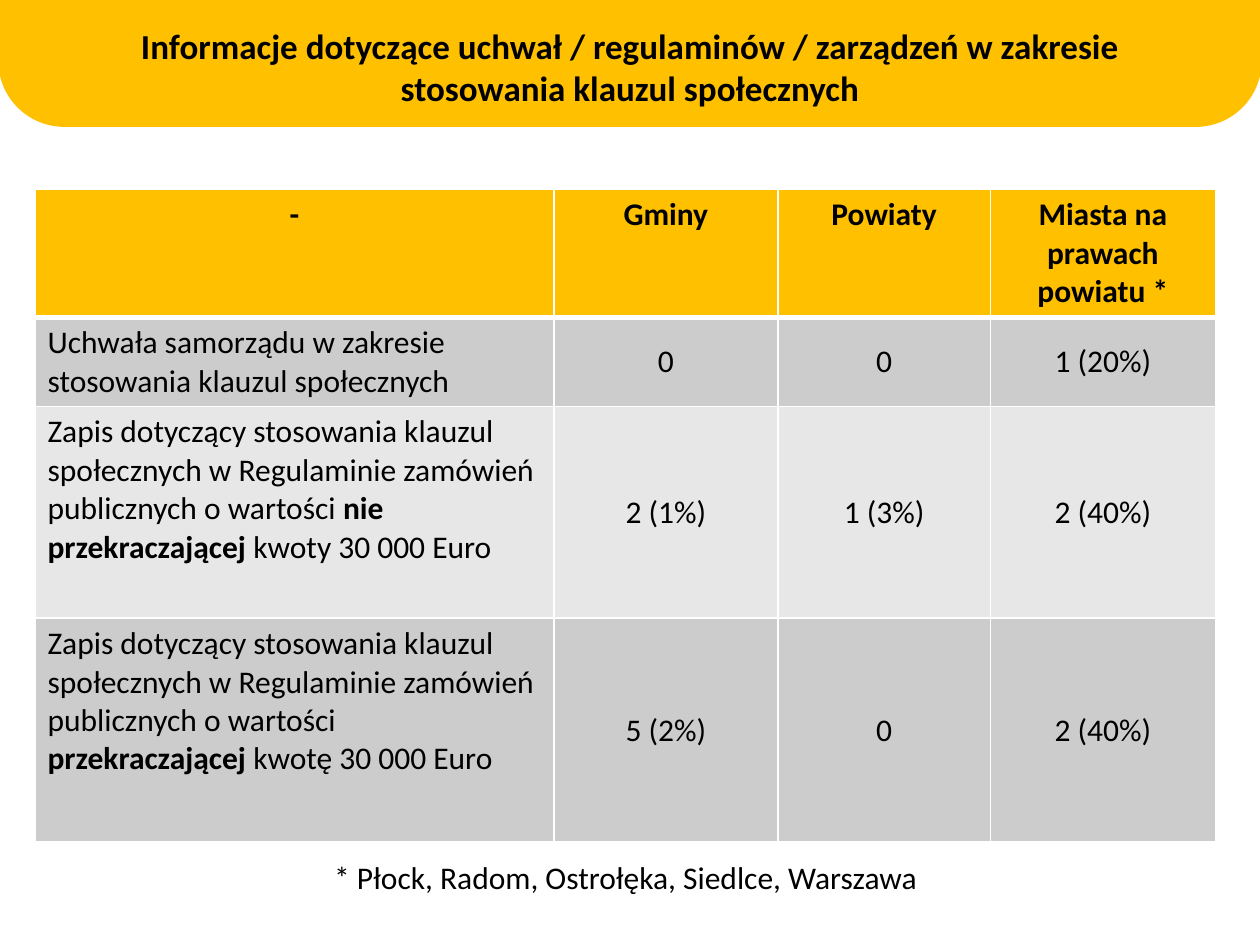
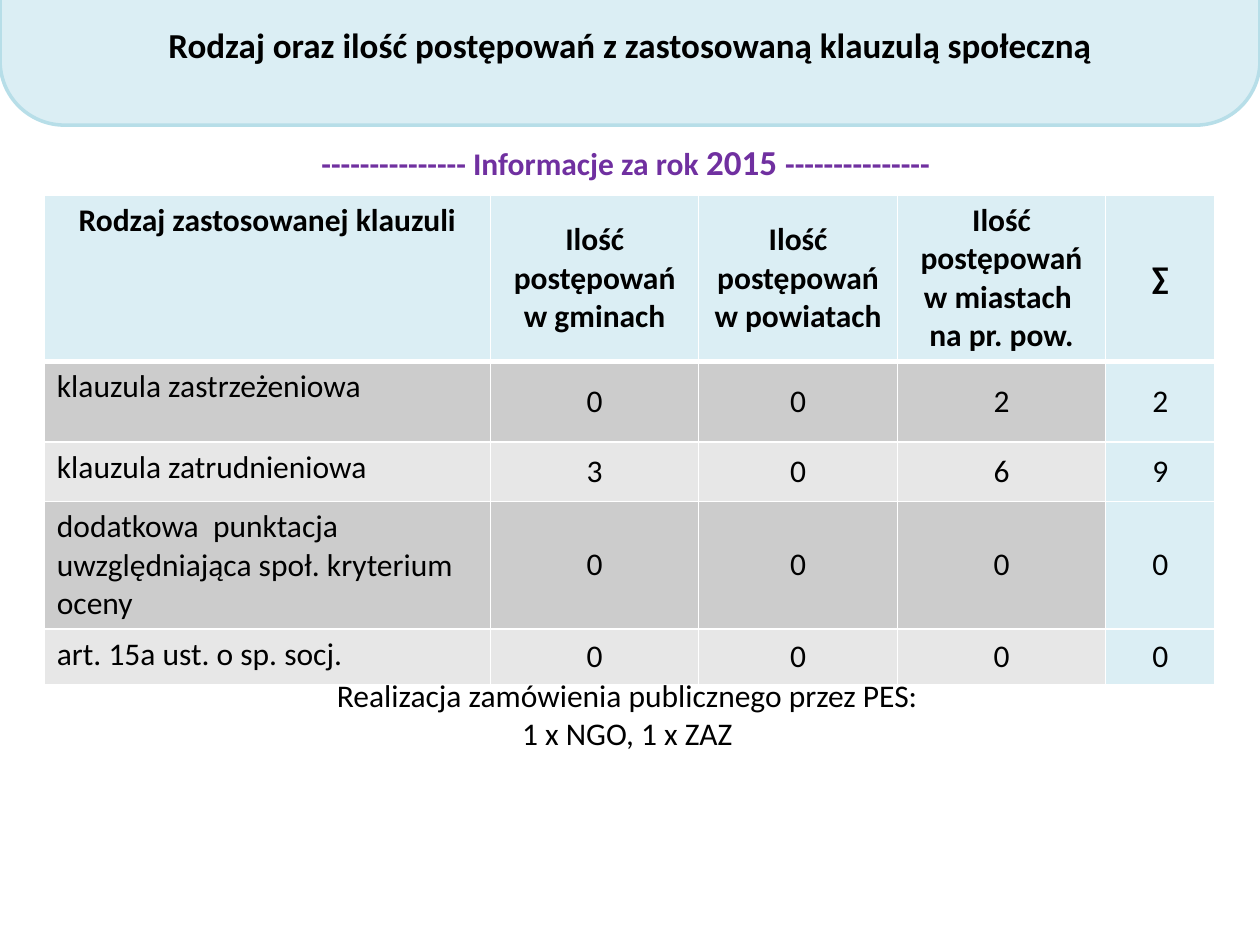
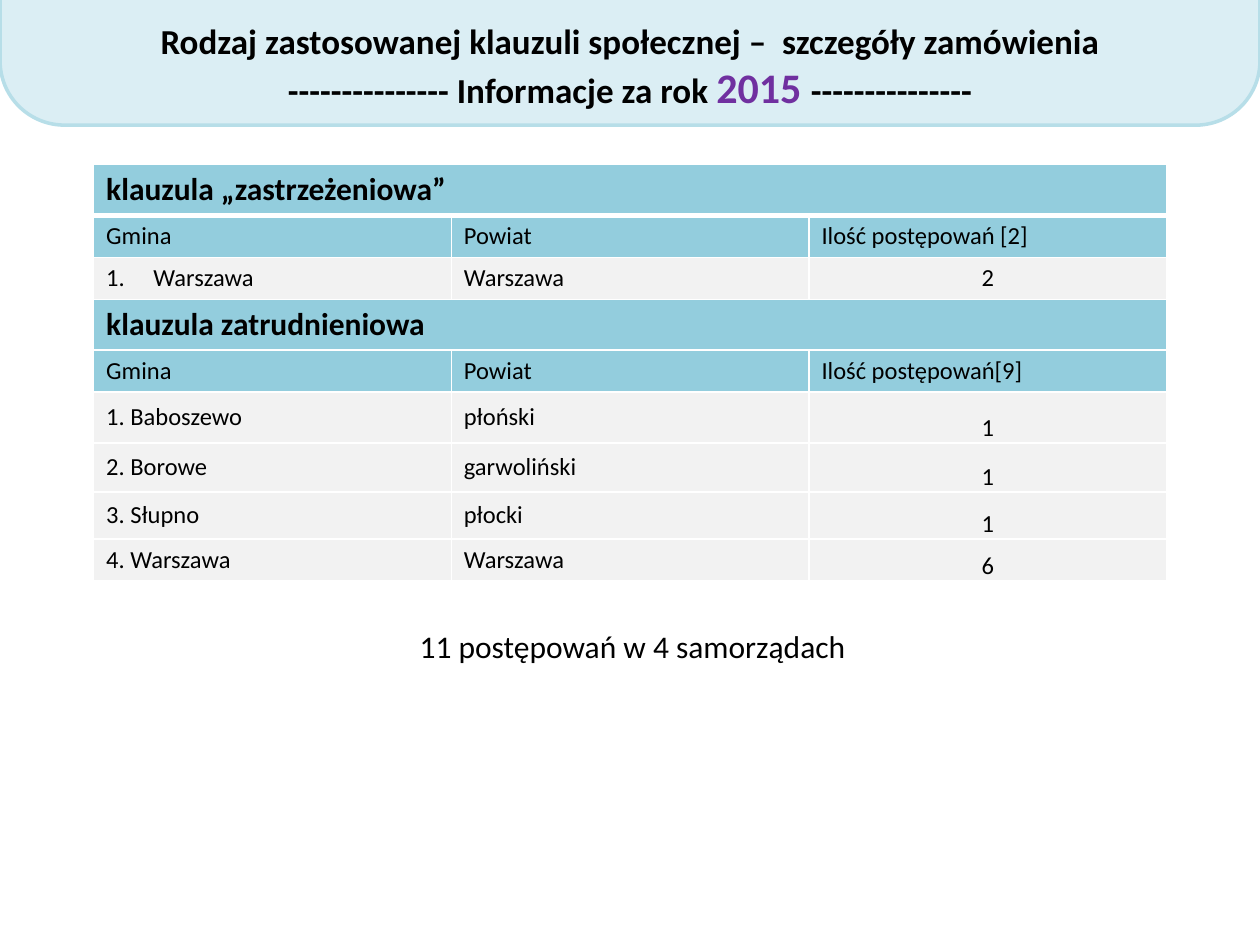
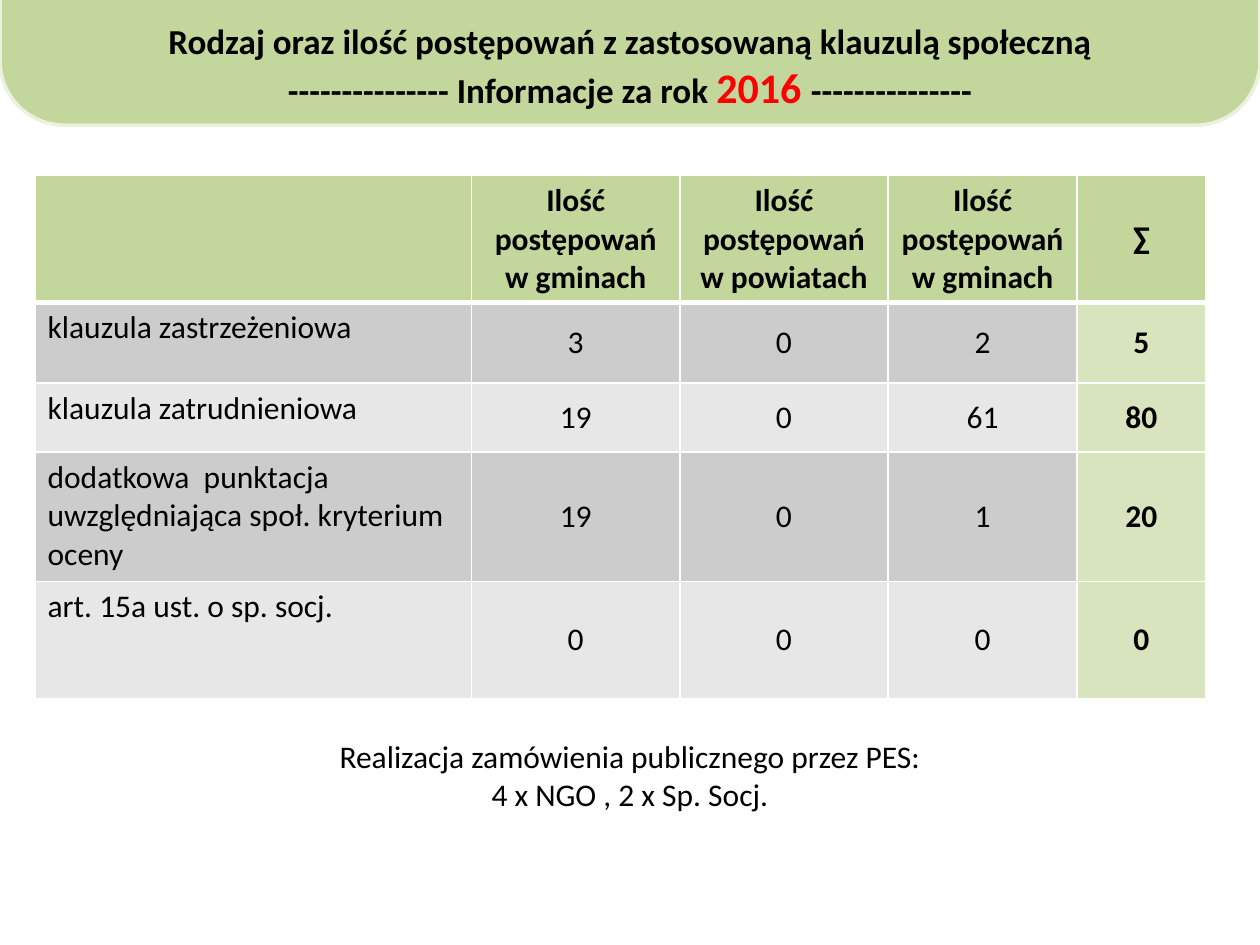
from lxml import etree
from pptx import Presentation
from pptx import util as u
from pptx.dml import color
from pptx.enum import shapes, text
from pptx.oxml import ns

FONT = "Calibri"
BLACK, WHITE = "000000", "FFFFFF"
PURPLE, RED = "7030A0", "FF0000"
AMBER = "FFC000"
ICE, ICE_EDGE, SKY = "DBEEF4", "B7DEE8", "93CDDD"
GREEN, GREEN_EDGE, GREEN_PALE = "C3D69B", "EBF1DE", "D7E4BD"
STRIPES = ("CCCCCC", "E7E7E7")
PALE_GREY = "F2F2F2"
DASHES = "---------------"
TITLE_BOX = (36, -2, 648, 79)

LEFT, CENTER = text.PP_ALIGN.LEFT, text.PP_ALIGN.CENTER
TOP, MIDDLE, BOTTOM = (text.MSO_ANCHOR.TOP, text.MSO_ANCHOR.MIDDLE,
                       text.MSO_ANCHOR.BOTTOM)


def rgb(value):
    return color.RGBColor.from_string(value)


# ---- Text ----
def write(frame, content, size=18, bold=False, ink=BLACK, align=LEFT):
    """Content is a string or a list of (text, overrides) runs."""
    paragraph = frame.paragraphs[0]
    paragraph.alignment = align
    runs = [(content, {})] if isinstance(content, str) else content
    for words, overrides in runs:
        style = {"size": size, "bold": bold, "ink": ink, **overrides}
        for number, line in enumerate(words.split("\n")):
            if number:
                paragraph.add_line_break()
            if not line:
                continue
            run = paragraph.add_run()
            run.text = line
            run.font.name = FONT
            run.font.size = u.Pt(style["size"])
            run.font.bold = style["bold"]
            run.font.color.rgb = rgb(style["ink"])


def add_text(slide, box, content, anchor=TOP, bottom_inset=3.6, **style):
    frame = slide.shapes.add_textbox(*map(u.Pt, box)).text_frame
    frame.word_wrap = True
    frame.vertical_anchor = anchor
    frame.margin_bottom = u.Pt(bottom_inset)
    write(frame, content, align=CENTER, **style)


def number_paragraph(paragraph, indent):
    properties = paragraph._p.get_or_add_pPr()
    properties.set("marL", str(u.Pt(indent)))
    properties.set("indent", str(-u.Pt(indent)))
    etree.SubElement(properties, ns.qn("a:buAutoNum"), type="arabicPeriod")


# ---- Title band ----
def add_title(slide, content, fill, edge, box=TITLE_BOX, bottom_inset=3.6):
    band = slide.shapes.add_shape(shapes.MSO_SHAPE.ROUND_2_SAME_RECTANGLE,
                                  *map(u.Pt, (0, -2, 720, 73.5)))
    band.rotation = 180
    band.adjustments[0] = 0.5
    band.adjustments[1] = 0
    band.shadow.inherit = False
    band.fill.solid()
    band.fill.fore_color.rgb = rgb(fill)
    band.line.color.rgb = rgb(edge)
    band.line.width = u.Pt(2)
    add_text(slide, box, content, MIDDLE, bottom_inset, size=20, bold=True)


def year_title(first_line, year, ink):
    return [(f"{first_line}\n{DASHES} Informacje za rok ", {}),
            (f"{year} ", {"size": 24, "ink": ink}), (DASHES, {})]


# ---- Tables ----
def set_borders(cell, top, bottom):
    properties = cell._tc.get_or_add_tcPr()
    widths = {"lnL": 1, "lnR": 1, "lnT": top, "lnB": bottom}
    for position, (side, width) in enumerate(widths.items()):
        line = etree.Element(ns.qn(f"a:{side}"), w=str(u.Pt(width)))
        fill = etree.SubElement(line, ns.qn("a:solidFill"))
        etree.SubElement(fill, ns.qn("a:srgbClr"), val=WHITE)
        properties.insert(position, line)


def add_grid(slide, left, top, widths, heights):
    """Empty table with white rules, the first one thicker below."""
    frame = slide.shapes.add_table(len(heights), len(widths), u.Pt(left), u.Pt(top),
                                   u.Pt(sum(widths)), u.Pt(sum(heights)))
    table = frame.table
    table.horz_banding = False
    for column, width in zip(table.columns, widths):
        column.width = u.Pt(width)
    for index, (row, height) in enumerate(zip(table.rows, heights)):
        row.height = u.Pt(height)
        for cell in row.cells:
            set_borders(cell, 3 if index == 1 else 1, 3 if index == 0 else 1)
    return table


def fill_cell(cell, content, fill, anchor=TOP, **style):
    cell.fill.solid()
    cell.fill.fore_color.rgb = rgb(fill)
    cell.vertical_anchor = anchor
    write(cell.text_frame, content, **style)


def add_striped_table(slide, left, top, widths, heights, rows, header_fill,
                      header_anchor=MIDDLE, sum_fill=None, sum_bold=False):
    """Header row, label column, centred values and an optional sum column."""
    table = add_grid(slide, left, top, widths, heights)
    for column, content in enumerate(rows[0]):
        fill_cell(table.cell(0, column), content, header_fill,
                  header_anchor if column else TOP, bold=True, align=CENTER)
    for index, (label, *values) in enumerate(rows[1:], 1):
        stripe = STRIPES[(index - 1) % 2]
        fill_cell(table.cell(index, 0), label, stripe)
        for column, value in enumerate(values, 1):
            is_sum = sum_fill is not None and column == len(values)
            fill_cell(table.cell(index, column), value,
                      sum_fill if is_sum else stripe, MIDDLE,
                      bold=is_sum and sum_bold, align=CENTER)


def add_detail_table(slide, left, top, widths, heights, sections):
    """Sections of a merged heading, a column header and numbered places."""
    table = add_grid(slide, left, top, widths, heights)
    index = 0
    for heading, count_label, anchors, places in sections:
        for column in range(3):
            fill_cell(table.cell(index, column), "" if column else heading,
                      SKY, bold=True)
        table.cell(index, 0).merge(table.cell(index, 2))
        for column, label in enumerate(("Gmina", "Powiat", count_label)):
            fill_cell(table.cell(index + 1, column), label, SKY, size=14)
        index += 2
        for place in places:
            for column, value in enumerate(place):
                cell = table.cell(index, column)
                fill_cell(cell, value, PALE_GREY, anchors[column], size=14,
                          align=CENTER if column == 2 else LEFT)
                if anchors[column] == BOTTOM:
                    cell.margin_bottom = 0
            index += 1
    return table


# ---- Slides ----
CLAUSES = ("klauzula zastrzeżeniowa", "klauzula zatrudnieniowa",
           "dodatkowa  punktacja uwzględniająca społ. kryterium oceny",
           "art. 15a ust. o sp. socj.")
IN_GMINY = "Ilość postępowań w gminach"
IN_POWIATY = "Ilość postępowań w powiatach"
KINDS_TITLE = "Rodzaj oraz ilość postępowań z zastosowaną klauzulą społeczną"
PES = "Realizacja zamówienia publicznego przez PES:"


def clause_rows(header, values):
    return [header] + [(clause, *row) for clause, row in zip(CLAUSES, values)]


def regulation_label(limit, amount):
    return [("Zapis dotyczący stosowania klauzul społecznych w Regulaminie "
             "zamówień publicznych o wartości ", {}),
            (f"{limit} ", {"bold": True}), (f"{amount} 30 000 Euro", {})]


def build_regulations(slide):
    add_title(slide, "Informacje dotyczące uchwał / regulaminów / zarządzeń "
              "w zakresie stosowania klauzul społecznych", AMBER, AMBER,
              box=(36, 4, 648, 68))
    rows = [("-", "Gminy", "Powiaty", "Miasta na prawach powiatu *"),
            ("Uchwała samorządu w zakresie stosowania klauzul społecznych",
             "0", "0", "1 (20%)"),
            (regulation_label("nie przekraczającej", "kwoty"),
             "2 (1%)", "1 (3%)", "2 (40%)"),
            (regulation_label("przekraczającej", "kwotę"),
             "5 (2%)", "0", "2 (40%)")]
    add_striped_table(slide, 20, 108.3, (296.5, 128, 121.5, 128.5),
                      (73, 51, 121, 128), rows, AMBER, header_anchor=TOP)
    add_text(slide, (20, 487, 675, 29),
             "* Płock, Radom, Ostrołęka, Siedlce, Warszawa")


def build_kinds_2015(slide):
    add_title(slide, KINDS_TITLE, ICE, ICE_EDGE, bottom_inset=27.6)
    header = ("Rodzaj zastosowanej klauzuli", IN_GMINY, IN_POWIATY,
              "Ilość postępowań w miastach  na pr. pow.", "∑")
    values = ("0022", "3069", "0000", "0000")
    add_striped_table(slide, 25.3, 111.5, (255, 119, 113.5, 119, 62.5),
                      (95, 46, 34, 73, 32), clause_rows(header, values),
                      ICE, sum_fill=ICE)
    add_text(slide, (181.5, 383, 354, 51), f"{PES}\n1 x NGO, 1 x ZAZ")
    add_text(slide, (139, 77, 437, 32),
             [(f"{DASHES} Informacje za rok ", {}), ("2015 ", {"size": 20}),
              (DASHES, {})], bold=True, ink=PURPLE)


def build_details_2015(slide):
    add_title(slide, year_title("Rodzaj zastosowanej klauzuli społecznej –  "
                                "szczegóły zamówienia", "2015", PURPLE),
              ICE, ICE_EDGE)
    add_text(slide, (227, 355, 269, 29), "11 postępowań w 4 samorządach")
    sections = [
        ("klauzula „zastrzeżeniowa”", "Ilość postępowań [2]", (TOP, TOP, TOP),
         [("Warszawa", "Warszawa", "2")]),
        ("klauzula zatrudnieniowa", "Ilość postępowań[9]",
         (MIDDLE, MIDDLE, BOTTOM),
         [("1. Baboszewo", "płoński", "1"), ("2. Borowe", "garwoliński", "1"),
          ("3. Słupno", "płocki", "1"), ("4. Warszawa", "Warszawa", "6")])]
    table = add_detail_table(slide, 53.5, 94, (204.4,) * 3,
                             (29, 24, 24, 29, 24, 29, 28, 27, 24), sections)
    number_paragraph(table.cell(2, 0).text_frame.paragraphs[0], 27)


def build_kinds_2016(slide):
    add_title(slide, year_title(KINDS_TITLE, "2016", RED), GREEN, GREEN_EDGE)
    header = ("", IN_GMINY, IN_POWIATY, IN_GMINY, "∑")
    values = (("3", "0", "2", "5"), ("19", "0", "61", "80"),
              ("19", "0", "1", "20"), ("0", "0", "0", "0"))
    add_striped_table(slide, 20, 100.3, (249.5, 119, 119, 108, 73.5),
                      (72.5, 46, 39.5, 74, 67), clause_rows(header, values),
                      GREEN, sum_fill=GREEN_PALE, sum_bold=True)
    add_text(slide, (183, 417.5, 354, 51), f"{PES}\n4 x NGO , 2 x Sp. Socj.")


def main():
    presentation = Presentation()
    presentation.slide_width, presentation.slide_height = u.Pt(720), u.Pt(540)
    blank = presentation.slide_layouts[6]
    for build in (build_regulations, build_kinds_2015, build_details_2015,
                  build_kinds_2016):
        build(presentation.slides.add_slide(blank))
    presentation.save("out.pptx")


if __name__ == "__main__":
    main()
